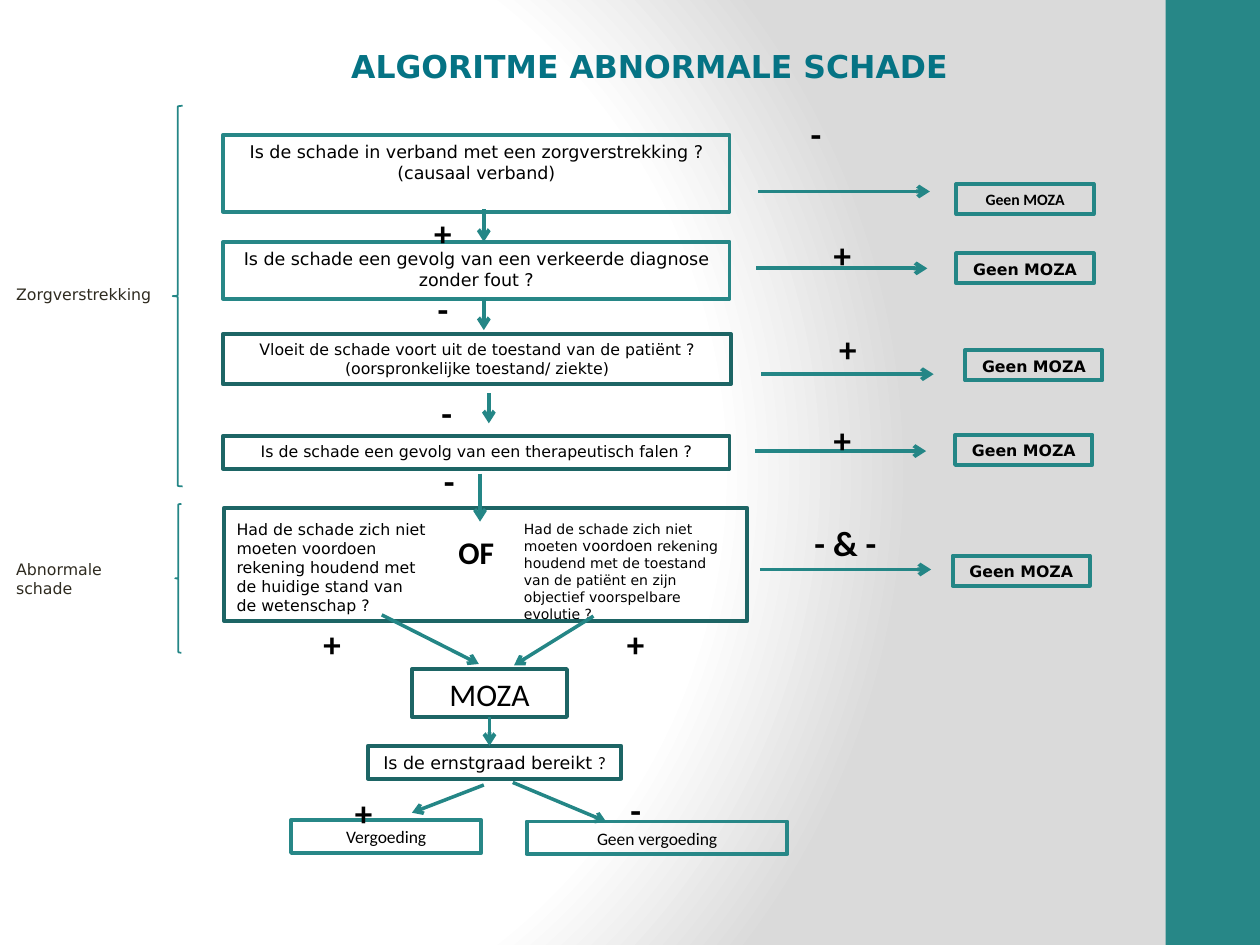
from dataclasses import dataclass

from pptx import Presentation
from pptx.dml.color import RGBColor
from pptx.enum.shapes import MSO_CONNECTOR as Connector, MSO_SHAPE as Shape
from pptx.enum.text import MSO_ANCHOR as Anchor, MSO_AUTO_SIZE as AutoSize, PP_ALIGN as Align
from pptx.oxml import parse_xml
from pptx.oxml.ns import nsdecls
from pptx.slide import Slide
from pptx.util import Inches, Pt

TEAL = RGBColor(0x27, 0x87, 0x87)
ARROW_TEAL = RGBColor(0x24, 0x86, 0x86)
DARK_TEAL = RGBColor(0x1D, 0x65, 0x65)
TITLE_TEAL = RGBColor(0x05, 0x73, 0x84)
LABEL_BROWN = RGBColor(0x2F, 0x2B, 0x20)
BLACK = RGBColor(0, 0, 0)
WHITE = RGBColor(0xFF, 0xFF, 0xFF)
GREY = RGBColor(0xDA, 0xDA, 0xDA)

COLUMNS = 100
SANS = "DejaVu Sans"
CALIBRI = "Calibri"
SIGN = {"name": CALIBRI, "size": 20, "bold": True}
ANSWER = {"size": 9, "bold": True}


@dataclass
class FlowChart:
    slide: Slide
    cell: float
    font: str = SANS
    line_width: float = 2.25

    def frame(self, *cells):
        return [round(value * self.cell) for value in cells]

    def background(self, stops):
        stop_xml = "".join(
            f'<a:gs pos="{share * 1000}"><a:srgbClr val="{color}"/></a:gs>' for share, color in stops
        )
        self.slide.element.cSld.insert(0, parse_xml(
            f'<p:bg {nsdecls("p", "a")}><p:bgPr><a:gradFill rotWithShape="1"><a:gsLst>{stop_xml}</a:gsLst>'
            '<a:path path="circle"><a:fillToRect l="20000" t="50000" r="100000" b="50000"/></a:path>'
            '</a:gradFill><a:effectLst/></p:bgPr></p:bg>'
        ))

    def fill_text(self, shape, paragraphs, align=Align.CENTER, margins=(0.1, 0.05), **style):
        text_frame = shape.text_frame
        horizontal, vertical = map(Inches, margins)
        settings = {
            "word_wrap": True, "auto_size": AutoSize.NONE, "vertical_anchor": Anchor.TOP,
            "margin_left": horizontal, "margin_right": horizontal,
            "margin_top": vertical, "margin_bottom": vertical,
        }
        for name, value in settings.items():
            setattr(text_frame, name, value)
        for index, runs in enumerate(paragraphs):
            paragraph = text_frame.add_paragraph() if index else text_frame.paragraphs[0]
            paragraph.alignment = align
            for text, changes in [(runs, {})] if isinstance(runs, str) else runs:
                run = paragraph.add_run()
                run.text = text
                values = {"name": self.font, "color": BLACK, **style, **changes}
                run.font.color.rgb = values.pop("color")
                values["size"] = Pt(values["size"])
                for name, value in values.items():
                    setattr(run.font, name, value)

    def text(self, place, *paragraphs, **style):
        self.fill_text(self.slide.shapes.add_textbox(*self.frame(*place)), paragraphs, **style)

    def outline(self, place, color, kind=Shape.RECTANGLE, width=None):
        shape = self.slide.shapes.add_shape(kind, *self.frame(*place))
        shape.shadow.inherit = False
        shape.fill.background()
        shape.line.color.rgb = color
        shape.line.width = Pt(width or self.line_width)
        return shape

    def box(self, place, color, *paragraphs, **style):
        shape = self.outline(place, color)
        self.fill_text(shape, paragraphs, **style)
        return shape

    def band(self, place, color):
        shape = self.outline(place, color)
        shape.fill.solid()
        shape.fill.fore_color.rgb = color
        shape.line.fill.background()

    def arrow(self, start, end, width=None, source=None):
        connector = self.slide.shapes.add_connector(Connector.STRAIGHT, *self.frame(*start, *end))
        if source is not None:
            connector.begin_connect(source, 2)
        connector.line.color.rgb = ARROW_TEAL
        connector.line.width = Pt(width or self.line_width)
        properties = connector.element.spPr
        properties.ln.append(parse_xml(f'<a:tailEnd {nsdecls("a")} type="arrow"/>'))
        properties.append(parse_xml(f'<a:effectLst {nsdecls("a")}/>'))


def main():
    presentation = Presentation()
    presentation.slide_width, presentation.slide_height = Inches(10), Inches(7.5)
    slide = presentation.slides.add_slide(presentation.slide_layouts[6])
    chart = FlowChart(slide, presentation.slide_width / COLUMNS)

    chart.background([(0, WHITE), (75, WHITE), (100, GREY)])
    chart.band((92.5, 0, 7.5, 75), TEAL)
    chart.text((8.8, 3.3, 85.5, 3.7), "ALGORITME ABNORMALE SCHADE", margins=(0.07, 0.04),
               size=18, bold=True, color=TITLE_TEAL)

    questions = [
        (10.7, 40.2, 6.1, TEAL, 10, ["Is de schade in verband met een zorgverstrekking ? (causaal verband)"]),
        (19.2, 40.2, 4.5, TEAL, 10, ["Is de schade een gevolg van een verkeerde diagnose zonder fout ?"]),
        (26.5, 40.3, 4, DARK_TEAL, 9, ["Vloeit de schade voort uit de toestand van de patiënt ?",
                                       "(oorspronkelijke toestand/ ziekte)"]),
        (34.6, 40.2, 2.6, DARK_TEAL, 9, ["Is de schade een gevolg van een therapeutisch falen ?"]),
    ]
    for top, width, height, color, size, paragraphs in questions:
        chart.box((17.7, top, width, height), color, *paragraphs, size=size)

    chart.outline((17.8, 40.3, 41.5, 9), DARK_TEAL)
    chart.text((35.4, 41.8, 6.7, 3.8), "OF", align=Align.LEFT, name=CALIBRI, size=18, bold=True)
    chart.text((17.8, 40.8, 17, 6.7),
               "Had de schade zich niet moeten voordoen rekening houdend met de huidige stand "
               "van de wetenschap ?", align=Align.LEFT, size=9)
    chart.text((40.6, 40.8, 18.1, 6.5),
               [("Had de schade zich niet moeten ", {}), ("voordoen", {"size": 8.5}),
                (" rekening houdend met de toestand van de patiënt en zijn objectief "
                 "voorspelbare evolutie ?", {})], align=Align.LEFT, size=8)

    exits = [
        (60.2, 73.8, 15.2, 75.9, 14.6, CALIBRI),
        (60, 73.6, 21.3, 75.9, 20.1, SANS),
        (60.4, 74.1, 29.7, 76.6, 27.8, SANS),
        (59.9, 73.5, 35.8, 75.8, 34.5, SANS),
        (60.3, 73.9, 45.2, 75.6, 44.1, SANS),
    ]
    for start, end, row, left, top, font in exits:
        chart.arrow((start, row), (end, row))
        chart.box((left, top, 10.9, 2.4), ARROW_TEAL, "Geen MOZA", name=font, **ANSWER)

    for column, start, end in [(38.4, 16.6, 19.2), (38.4, 23.7, 26.2), (38.8, 31.2, 33.6), (38.1, 37.6, 41.4)]:
        chart.arrow((column, start), (column, end))

    result = chart.box((32.7, 53.1, 12.3, 3.8), DARK_TEAL, "MOZA", name=CALIBRI, size=18)
    chart.box((29.2, 59.2, 20.1, 2.6), DARK_TEAL,
              [("Is de ernstgraad bereikt ", {}), ("?", {"name": CALIBRI})], size=10)
    chart.box((23.1, 65.1, 15.1, 2.6), TEAL, "Vergoeding", name=CALIBRI, size=10)
    chart.box((41.8, 65.2, 20.7, 2.6), TEAL, "Geen vergoeding", name=CALIBRI, size=10)
    chart.arrow((38.85, 56.9), (38.85, 59.2), source=result)
    for start, end in [((30.3, 48.8), (38, 52.7)), ((47.1, 48.9), (40.8, 52.8)),
                       ((38.4, 62.3), (32.7, 64.5)), ((40.7, 62.1), (48.1, 65.2))]:
        chart.arrow(start, end, width=2)

    signs = [
        ("-", 62.5, 8.4, 4.5), ("+", 64.8, 18, 4.1), ("+", 65, 25.5, 4.6),
        ("+", 64.8, 32.7, 4.1), ("- & -", 62.8, 40.9, 8.6),
        ("+", 33.1, 16.3, 4.1), ("-", 33.1, 22.3, 4.1), ("-", 33.4, 30.6, 4.1), ("-", 33.6, 36, 4.1),
        ("+", 22.8, 48.9, 7.1), ("+", 46.9, 48.9, 7.1), ("+", 26.8, 62.3, 4.1), ("-", 48.4, 62.1, 4.1),
    ]
    for sign, left, top, width in signs:
        chart.text((left, top, width, 4.2), sign, **SIGN)

    phases = [
        ((13.7, 8.4, 0.8, 30.2), (0.3, 22.1, 12.9, 2.5), ["Zorgverstrekking"]),
        ((13.9, 40, 0.5, 11.8), (0.3, 43.9, 12.6, 4.5), ["Abnormale", "schade"]),
    ]
    for brace, label, paragraphs in phases:
        chart.outline(brace, ARROW_TEAL, Shape.LEFT_BRACE, 1)
        chart.text(label, *paragraphs, align=Align.LEFT, size=9, color=LABEL_BROWN)

    presentation.save("out.pptx")


if __name__ == "__main__":
    main()
